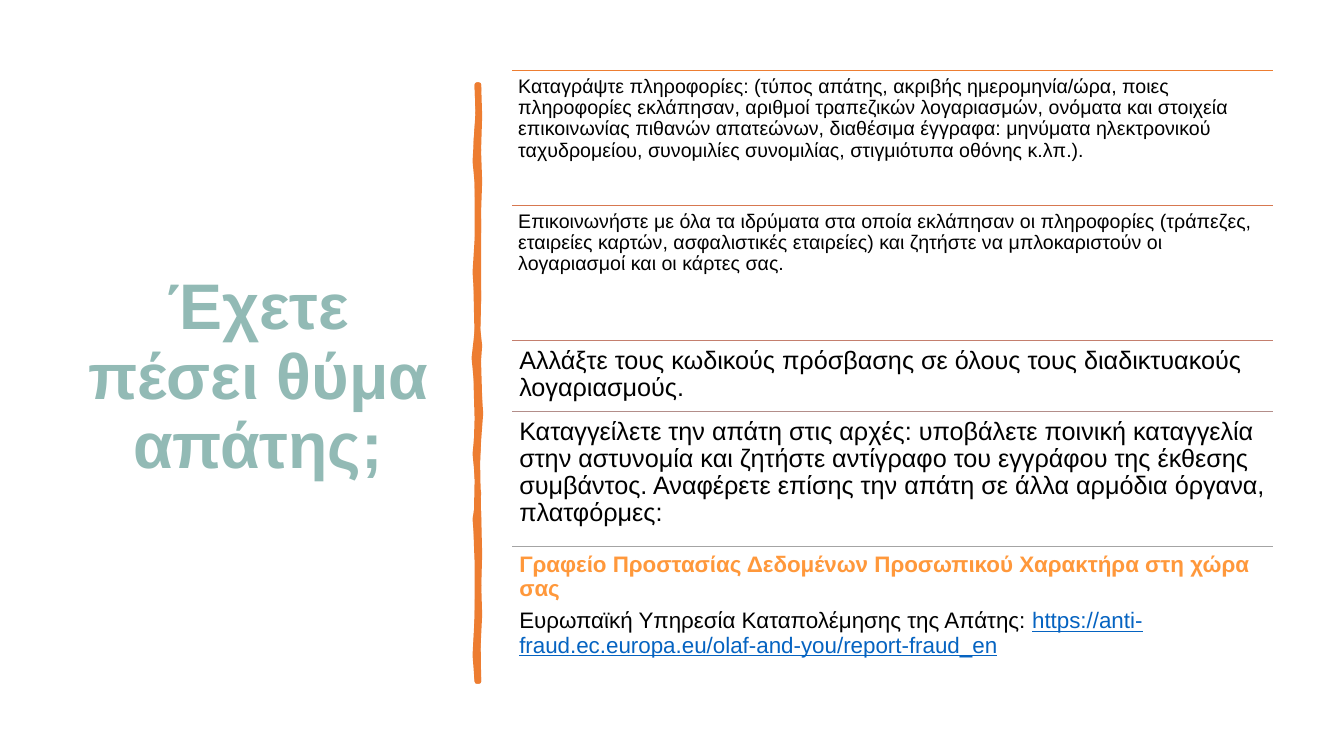
"""Build a slide on what to do after falling victim to fraud."""
from dataclasses import dataclass

from lxml import etree
from pptx import Presentation
from pptx.dml.color import RGBColor
from pptx.enum.shapes import MSO_CONNECTOR
from pptx.enum.text import MSO_ANCHOR, MSO_AUTO_SIZE, PP_ALIGN
from pptx.oxml.ns import qn
from pptx.slide import Slide
from pptx.text.text import TextFrame, _Paragraph
from pptx.util import Emu, Pt

STRAIGHT = MSO_CONNECTOR.STRAIGHT
TOP, MIDDLE = MSO_ANCHOR.TOP, MSO_ANCHOR.MIDDLE
LEFT, CENTER = PP_ALIGN.LEFT, PP_ALIGN.CENTER
NO_AUTOFIT = MSO_AUTO_SIZE.NONE

EMU_PER_PX = 9144
PAGE_WIDTH, PAGE_HEIGHT = 1333, 750
LIST_LEFT, LIST_TOP, LIST_WIDTH = 508, 70, 755
TALL, SHORT = 134, 70


@dataclass(frozen=True)
class Theme:
    font: str = "Arial"
    title: str = "92BAB5"
    text: str = "000000"
    accent: str = "ED7D31"
    highlight: str = "FF983B"
    link: str = "0563C1"
    title_size: int = 46
    large: int = 18
    medium: int = 16
    small: int = 14
    line_spacing: float = 0.9
    rule_width: float = 1
    brush_width: float = 3.25


THEME = Theme()


@dataclass(frozen=True)
class Span:
    text: str
    color: str = THEME.text
    bold: bool = False
    underline: bool = False


@dataclass(frozen=True)
class Step:
    paragraphs: tuple[tuple[Span, ...], ...]
    rule_color: str
    size: int
    height: int = TALL
    inset: int = 7


STEPS = (
    Step(((Span("Καταγράψτε πληροφορίες: (τύπος απάτης, ακριβής ημερομηνία/ώρα, "
                "ποιες πληροφορίες εκλάπησαν, αριθμοί τραπεζικών λογαριασμών, "
                "ονόματα και στοιχεία επικοινωνίας πιθανών απατεώνων, διαθέσιμα "
                "έγγραφα: μηνύματα ηλεκτρονικού ταχυδρομείου, συνομιλίες "
                "συνομιλίας, στιγμιότυπα οθόνης κ.λπ.)."),),),
         THEME.accent, THEME.small, inset=6),
    Step(((Span("Επικοινωνήστε με όλα τα ιδρύματα στα οποία εκλάπησαν οι "
                "πληροφορίες (τράπεζες, εταιρείες καρτών, ασφαλιστικές εταιρείες) "
                "και ζητήστε να μπλοκαριστούν οι λογαριασμοί και οι κάρτες σας."),),),
         "D77850", THEME.small, inset=6),
    Step(((Span("Αλλάξτε τους κωδικούς πρόσβασης σε όλους τους διαδικτυακούς "
                "λογαριασμούς."),),),
         "C47F6E", THEME.large, height=SHORT),
    Step(((Span("Καταγγείλετε την απάτη στις αρχές: υποβάλετε ποινική καταγγελία "
                "στην αστυνομία και ζητήστε αντίγραφο του εγγράφου της έκθεσης "
                "συμβάντος. Αναφέρετε επίσης την απάτη σε άλλα αρμόδια όργανα, "
                "πλατφόρμες:"),),),
         "B38E8A", THEME.large),
    Step(((Span("Γραφείο Προστασίας Δεδομένων Προσωπικού Χαρακτήρα στη χώρα σας",
                THEME.highlight, bold=True),),
          (Span("Ευρωπαϊκή Υπηρεσία Καταπολέμησης της Απάτης: "),
           Span("https://anti-fraud.ec.europa.eu/olaf-and-you/report-fraud_en",
                THEME.link, underline=True))),
         "A4A4A4", THEME.medium),
)

BRUSH_STROKES = (
    ((475, 84), (476, 115), (475, 146), (474, 170), (475, 226), (474, 257),
     (475, 294), (474, 325), (476, 343), (475, 356), (474, 368), (477, 410),
     (475, 436), (473, 470), (475, 510), (476, 550), (475, 584), (474, 603),
     (475, 676), (473, 676), (472, 640), (473, 613), (473, 557), (472, 530),
     (473, 477), (472, 450), (473, 415), (472, 380), (473, 335), (472, 290),
     (473, 250), (474, 215), (473, 181), (471, 160), (474, 110), (473, 84)),
    ((475, 84), (474, 125), (475, 152), (476, 180), (475, 208), (475, 294),
     (474, 340), (475, 362), (476, 395), (475, 430), (474, 460), (475, 516),
     (475, 578), (476, 610), (474, 650), (475, 676), (473, 676), (471, 650),
     (473, 613), (474, 570), (473, 539), (471, 515), (475, 490), (473, 471),
     (471, 450), (475, 410), (473, 386), (470, 355), (474, 320), (473, 300),
     (471, 270), (473, 238), (473, 164), (472, 140), (474, 115), (473, 84)),
)


def px(length: int) -> Emu:
    """Turn a length in px into EMU."""
    return Emu(length * EMU_PER_PX)


def rgb(color: str) -> RGBColor:
    """Turn a hex string into a colour."""
    return RGBColor.from_string(color)


def add_span(para: _Paragraph, text: str, *, size: int, color: str,
             bold: bool = False, underline: bool = False) -> None:
    """Add formatted text to a paragraph."""
    run = para.add_run()
    run.text = text
    run.font.name = THEME.font
    run.font.size = Pt(size)
    run.font.color.rgb = rgb(color)
    run.font.bold = bold
    run.font.underline = underline


def format_frame(frame: TextFrame, *, anchor: MSO_ANCHOR,
                 side: int, edge: int) -> None:
    """Set the wrapping, anchor and insets of a text frame."""
    frame.word_wrap = True
    frame.auto_size = NO_AUTOFIT
    frame.vertical_anchor = anchor
    frame.margin_left = frame.margin_right = px(side)
    frame.margin_top = frame.margin_bottom = px(edge)


def format_paragraph(para: _Paragraph, *, align: PP_ALIGN,
                     before: float = 0) -> None:
    """Set the alignment and spacing of a paragraph."""
    para.alignment = align
    para.line_spacing = THEME.line_spacing
    para.space_before = Pt(before)


def draw_title(page: Slide) -> None:
    """Place and format the title."""
    title = page.shapes.title
    title.left, title.top, title.width, title.height = map(px, (69, 70, 374, 611))
    format_frame(title.text_frame, anchor=MIDDLE, side=10, edge=5)
    para = title.text_frame.paragraphs[0]
    format_paragraph(para, align=CENTER)
    add_span(para, "Έχετε πέσει θύμα απάτης;", size=THEME.title_size,
             color=THEME.title, bold=True)


def draw_brush(page: Slide) -> None:
    """Draw the uneven upright brush stroke."""
    first, *others = BRUSH_STROKES
    builder = page.shapes.build_freeform(*first[0], scale=EMU_PER_PX)
    builder.add_line_segments(first[1:])
    for stroke in others:
        builder.move_to(*stroke[0])
        builder.add_line_segments(stroke[1:])
    brush = builder.convert_to_shape()
    brush.shadow.inherit = False
    brush.fill.solid()
    brush.fill.fore_color.rgb = rgb(THEME.accent)
    brush.line.color.rgb = rgb(THEME.accent)
    brush.line.width = Pt(THEME.brush_width)
    outline = brush._element.spPr.find(qn("a:ln"))
    outline.set("cap", "rnd")
    etree.SubElement(outline, qn("a:round"))


def draw_step(page: Slide, step: Step, top: int) -> None:
    """Draw a rule and the text of one step below it."""
    rule = page.shapes.add_connector(
        STRAIGHT, px(LIST_LEFT), px(top), px(LIST_LEFT + LIST_WIDTH), px(top))
    rule.line.color.rgb = rgb(step.rule_color)
    rule.line.width = Pt(THEME.rule_width)
    etree.SubElement(rule._element.spPr, qn("a:effectLst"))
    box = page.shapes.add_textbox(
        px(LIST_LEFT), px(top), px(LIST_WIDTH), px(step.height))
    frame = box.text_frame
    format_frame(frame, anchor=TOP, side=step.inset, edge=step.inset)
    for index, spans in enumerate(step.paragraphs):
        para = frame.add_paragraph() if index else frame.paragraphs[0]
        format_paragraph(para, align=LEFT, before=5.6 if index else 0)
        for span in spans:
            add_span(para, span.text, size=step.size, color=span.color,
                     bold=span.bold, underline=span.underline)


def main() -> None:
    """Build and save the deck."""
    deck = Presentation()
    deck.slide_width, deck.slide_height = px(PAGE_WIDTH), px(PAGE_HEIGHT)
    page = deck.slides.add_slide(deck.slide_layouts.get_by_name("Title Only"))
    draw_title(page)
    draw_brush(page)
    top = LIST_TOP
    for step in STEPS:
        draw_step(page, step, top)
        top += step.height
    deck.save("out.pptx")


if __name__ == "__main__":
    main()
